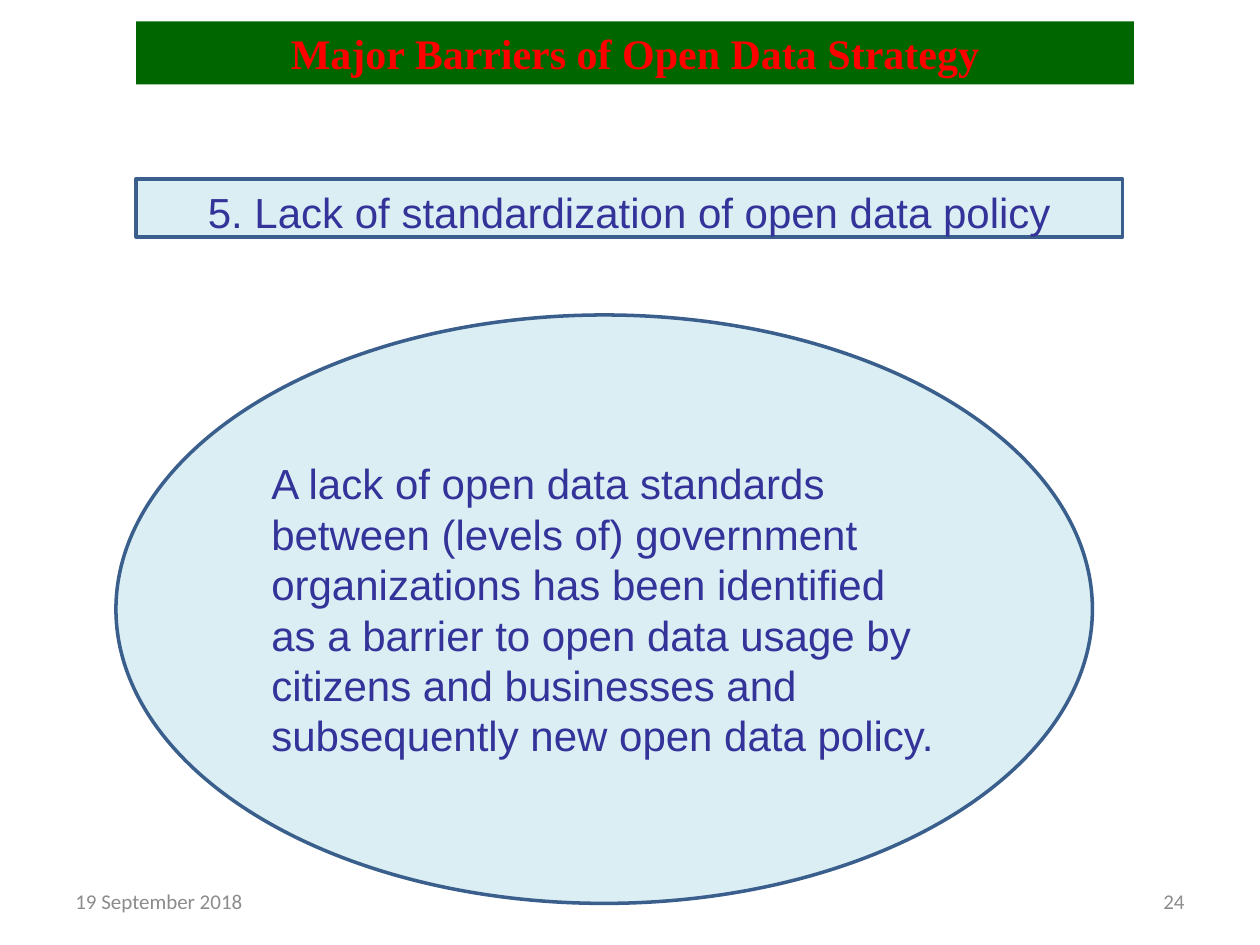
from dataclasses import dataclass

from pptx import Presentation
from pptx.dml.color import RGBColor
from pptx.enum.shapes import MSO_SHAPE
from pptx.enum.text import MSO_ANCHOR, PP_ALIGN
from pptx.util import Inches, Pt


@dataclass(frozen=True)
class Theme:
    """Colours, fonts and type sizes of the slide."""
    green: str = "006600"
    red: str = "FF0000"
    pale: str = "DBEEF4"
    edge: str = "3A5F8C"
    ink: str = "333399"
    gray: str = "8C8C8C"
    serif: str = "Times New Roman"
    sans: str = "Arial"
    small: str = "Calibri"
    body: int = 24
    foot: int = 12


THEME = Theme()


def color(code):
    """Turn a hex code into a colour."""
    return RGBColor.from_string(code)


def write(shape, text, font, size, ink, align=PP_ALIGN.LEFT, bold=False):
    """Put one run of text in a shape and return its paragraph."""
    frame = shape.text_frame
    frame.word_wrap = True
    frame.vertical_anchor = MSO_ANCHOR.MIDDLE
    para = frame.paragraphs[0]
    para.alignment = align
    run = para.add_run()
    run.text = text
    run.font.name = font
    run.font.size = Pt(size)
    run.font.bold = bold
    run.font.color.rgb = color(ink)
    return para


def panel(slide, kind, box, fill, edge=None):
    """Add a filled shape, outlined when an edge colour is given."""
    shape = slide.shapes.add_shape(kind, *map(Inches, box))
    shape.shadow.inherit = False
    shape.fill.solid()
    shape.fill.fore_color.rgb = color(fill)
    if edge:
        shape.line.color.rgb = color(edge)
        shape.line.width = Pt(2)
    else:
        shape.line.fill.background()
    return shape


def title(slide, box, text):
    """Add the green title bar."""
    shape = panel(slide, MSO_SHAPE.RECTANGLE, box, THEME.green)
    write(shape, text, THEME.serif, THEME.body, THEME.red, PP_ALIGN.CENTER, True)


def footer(slide, box, date, number):
    """Add the date at the left and the page number at the right of the box."""
    left, top, width, height = box
    part = 2.33
    ends = ((left, date, PP_ALIGN.LEFT),
            (left + width - part, number, PP_ALIGN.RIGHT))
    for x, text, align in ends:
        area = slide.shapes.add_textbox(*map(Inches, (x, top, part, height)))
        write(area, text, THEME.small, THEME.foot, THEME.gray, align)


def detail(slide, box, text):
    """Add the ellipse that explains the barrier."""
    shape = panel(slide, MSO_SHAPE.OVAL, box, THEME.pale, THEME.edge)
    write(shape, text, THEME.sans, THEME.body, THEME.ink)


def heading(slide, box, text):
    """Add the outlined bar that names the barrier."""
    shape = panel(slide, MSO_SHAPE.RECTANGLE, box, THEME.pale, THEME.edge)
    para = write(shape, text, THEME.sans, THEME.body, THEME.ink, PP_ALIGN.CENTER)
    para.line_spacing = 1.15
    para.space_after = Pt(10)


def main():
    """Build and save the slide."""
    deck = Presentation()
    deck.slide_width, deck.slide_height = Inches(10), Inches(7.5)
    slide = deck.slides.add_slide(deck.slide_layouts[6])
    title(slide, (1.08, 0.17, 7.92, 0.5), "Major Barriers of Open Data Strategy")
    footer(slide, (0.5, 6.95, 9, 0.4), "19 September 2018", "24")
    detail(slide, (0.92, 2.5, 7.75, 4.67),
           "A lack of open data standards between (levels of) government "
           "organizations has been identified as a barrier to open data usage "
           "by citizens and businesses and subsequently new open data policy.")
    heading(slide, (1.08, 1.42, 7.83, 0.46),
            "5. Lack of standardization of open data policy")
    deck.save("out.pptx")


if __name__ == "__main__":
    main()
